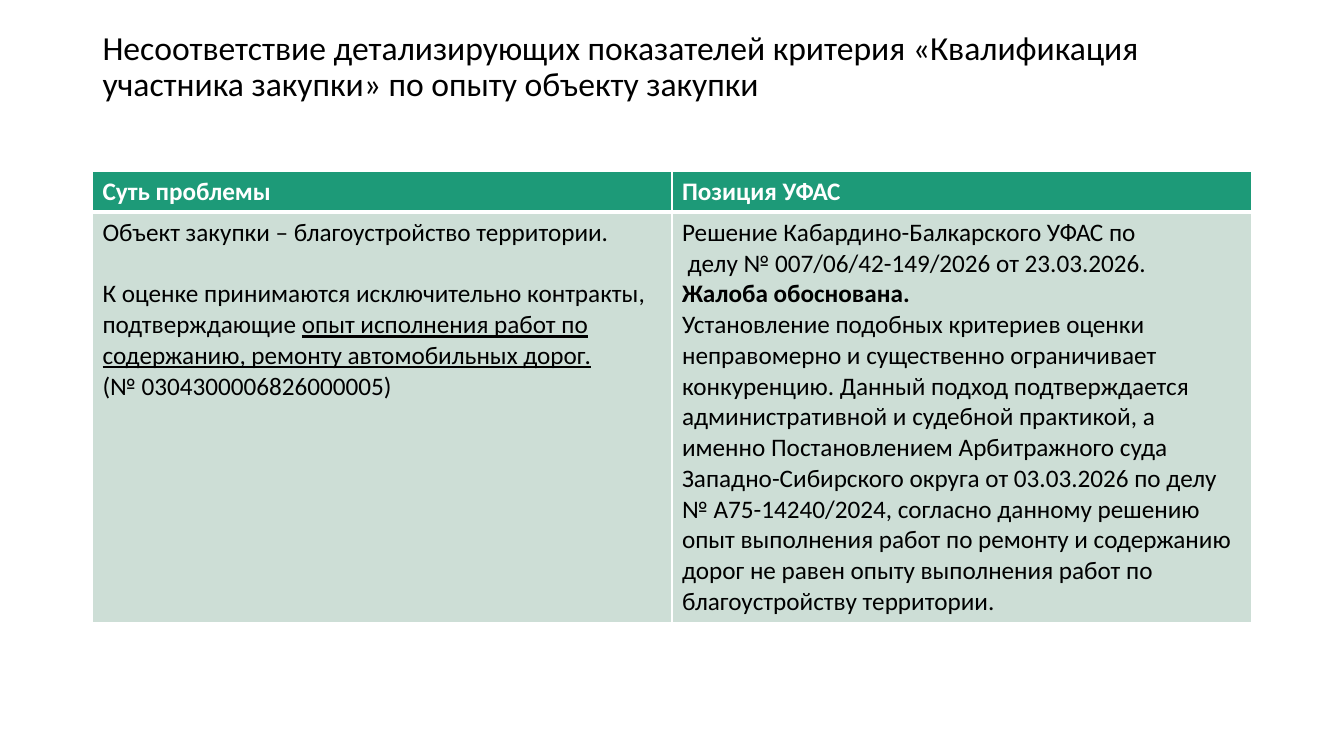
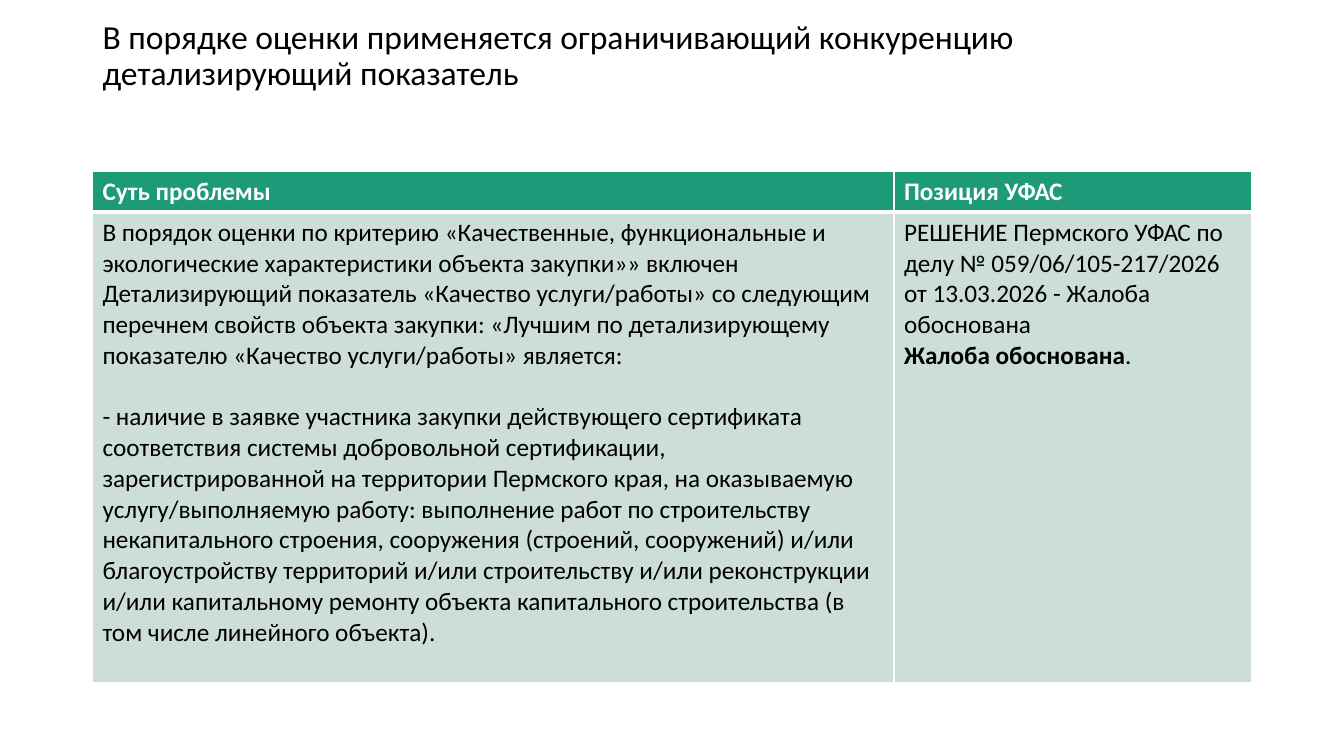
"""Builds two slides that set procurement problems against the regulator's position."""
from dataclasses import dataclass

from lxml.etree import SubElement
from pptx import Presentation
from pptx.dml.color import RGBColor as Rgb
from pptx.enum.text import MSO_ANCHOR as Anchor, MSO_AUTO_SIZE as AutoSize, PP_ALIGN as Align
from pptx.oxml.ns import qn
from pptx.util import Cm, Pt

COLORS = {"header": "1D9A78", "body": "CDDED6", "light": "FFFFFF", "dark": "000000"}
FONT = "Calibri"
TITLE_SIZE, TEXT_SIZE = Pt(24), Pt(18)
LINE_GAP = Pt(22)
LEFT, WIDTH = Cm(2.33), Cm(29.21)
TITLE_TOP, TABLE_TOP = Cm(0.33), Cm(4.32)
HEADER_HEIGHT = Cm(1.03)
HEADERS = ("Суть проблемы", "Позиция УФАС")
THIN, THICK = Pt(1), Pt(3)


@dataclass
class Box:
    left: int
    top: int
    width: int
    height: int


@dataclass
class Para:
    spans: list
    gap: bool = False


def add_span(para, text, size, color, bold=False, underline=False):
    span = para.add_run()
    span.text = text
    font = span.font
    font.name, font.size = FONT, size
    font.bold, font.underline = bold, underline
    font.color.rgb = Rgb.from_string(COLORS[color])


def add_title(page, box, text, bottom_margin):
    title = page.shapes.title
    title.left, title.top, title.width, title.height = box.left, box.top, box.width, box.height
    frame = title.text_frame
    frame.word_wrap = True
    frame.auto_size = AutoSize.NONE
    frame.vertical_anchor = Anchor.MIDDLE
    frame.margin_bottom = bottom_margin
    para = frame.paragraphs[0]
    para.alignment = Align.LEFT
    para.line_spacing = 0.9
    add_span(para, text, TITLE_SIZE, "dark")


def set_borders(cell, top, bottom):
    properties = cell._tc.get_or_add_tcPr()
    for side, width in (("L", THIN), ("R", THIN), ("T", top), ("B", bottom)):
        line = SubElement(properties, qn(f"a:ln{side}"), w=str(width))
        fill = SubElement(line, qn("a:solidFill"))
        SubElement(fill, qn("a:srgbClr"), val=COLORS["light"])


def fill_cell(cell, paras, fill, color, top, bottom, bold=False):
    set_borders(cell, top, bottom)
    cell.fill.solid()
    cell.fill.fore_color.rgb = Rgb.from_string(COLORS[fill])
    frame = cell.text_frame
    for index, content in enumerate(paras):
        para = frame.add_paragraph() if index else frame.paragraphs[0]
        if content.gap:
            para.space_before = LINE_GAP
        for text, style in content.spans:
            add_span(para, text, TEXT_SIZE, color, bold or style == "bold", style == "underline")


def add_position_table(page, box, first_width, bodies):
    table = page.shapes.add_table(2, 2, box.left, box.top, box.width, box.height).table
    table.horz_banding = False
    table.columns[0].width = first_width
    table.columns[1].width = box.width - first_width
    table.rows[0].height = HEADER_HEIGHT
    table.rows[1].height = box.height - HEADER_HEIGHT
    for column, (header, body) in enumerate(zip(HEADERS, bodies)):
        heading = [Para([(header, "plain")])]
        fill_cell(table.cell(0, column), heading, "header", "light", THIN, THICK, bold=True)
        fill_cell(table.cell(1, column), body, "body", "dark", THICK, THIN)


def add_case_slide(deck, title, title_height, title_margin, table_height, first_width, bodies):
    page = deck.slides.add_slide(deck.slide_layouts[5])
    add_title(page, Box(LEFT, TITLE_TOP, WIDTH, title_height), title, title_margin)
    add_position_table(page, Box(LEFT, TABLE_TOP, WIDTH, table_height), first_width, bodies)


def main():
    deck = Presentation()
    deck.slide_width, deck.slide_height = Cm(33.87), Cm(19.05)

    experience_problem = [
        Para([("Объект закупки – благоустройство территории.", "plain")]),
        Para([
            ("К оценке принимаются исключительно контракты, подтверждающие ", "plain"),
            ("опыт исполнения работ по содержанию, ремонту автомобильных дорог.", "underline"),
        ], gap=True),
        Para([("(№ 0304300006826000005)", "plain")]),
    ]
    experience_position = [
        Para([("Решение Кабардино-Балкарского УФАС по", "plain")]),
        Para([(" делу № 007/06/42-149/2026 от 23.03.2026.", "plain")]),
        Para([("Жалоба обоснована.", "bold")]),
        Para([(
            "Установление подобных критериев оценки неправомерно и существенно ограничивает "
            "конкуренцию. Данный подход подтверждается административной и судебной практикой, "
            "а именно Постановлением Арбитражного суда Западно-Сибирского округа от 03.03.2026 "
            "по делу № А75-14240/2024, согласно данному решению опыт выполнения работ по ремонту "
            "и содержанию дорог не равен опыту выполнения работ по благоустройству территории.",
            "plain",
        )]),
    ]
    add_case_slide(
        deck,
        "Несоответствие детализирующих показателей критерия «Квалификация участника закупки» "
        "по опыту объекту закупки",
        Cm(3.68), Cm(1.06), Cm(11.3), WIDTH // 2,
        (experience_problem, experience_position),
    )

    quality_problem = [
        Para([(
            "В порядок оценки по критерию «Качественные, функциональные и экологические "
            "характеристики объекта закупки»» включен Детализирующий показатель «Качество "
            "услуги/работы» со следующим перечнем свойств объекта закупки: «Лучшим по "
            "детализирующему показателю «Качество услуги/работы» является:",
            "plain",
        )]),
        Para([(
            "- наличие в заявке участника закупки действующего сертификата соответствия системы "
            "добровольной сертификации, зарегистрированной на территории Пермского края, на "
            "оказываемую услугу/выполняемую работу: выполнение работ по строительству "
            "некапитального строения, сооружения (строений, сооружений) и/или благоустройству "
            "территорий и/или строительству и/или реконструкции и/или капитальному ремонту "
            "объекта капитального строительства (в том числе линейного объекта).",
            "plain",
        )], gap=True),
    ]
    quality_position = [
        Para([(
            "РЕШЕНИЕ Пермского УФАС по делу № 059/06/105-217/2026 от 13.03.2026 - "
            "Жалоба обоснована",
            "plain",
        )]),
        Para([("Жалоба обоснована", "bold"), (".", "plain")]),
    ]
    add_case_slide(
        deck,
        "В порядке оценки применяется ограничивающий конкуренцию детализирующий показатель",
        Cm(2.21), Cm(0.13), Cm(12.87), Cm(20.2),
        (quality_problem, quality_position),
    )

    deck.save("out.pptx")


if __name__ == "__main__":
    main()
